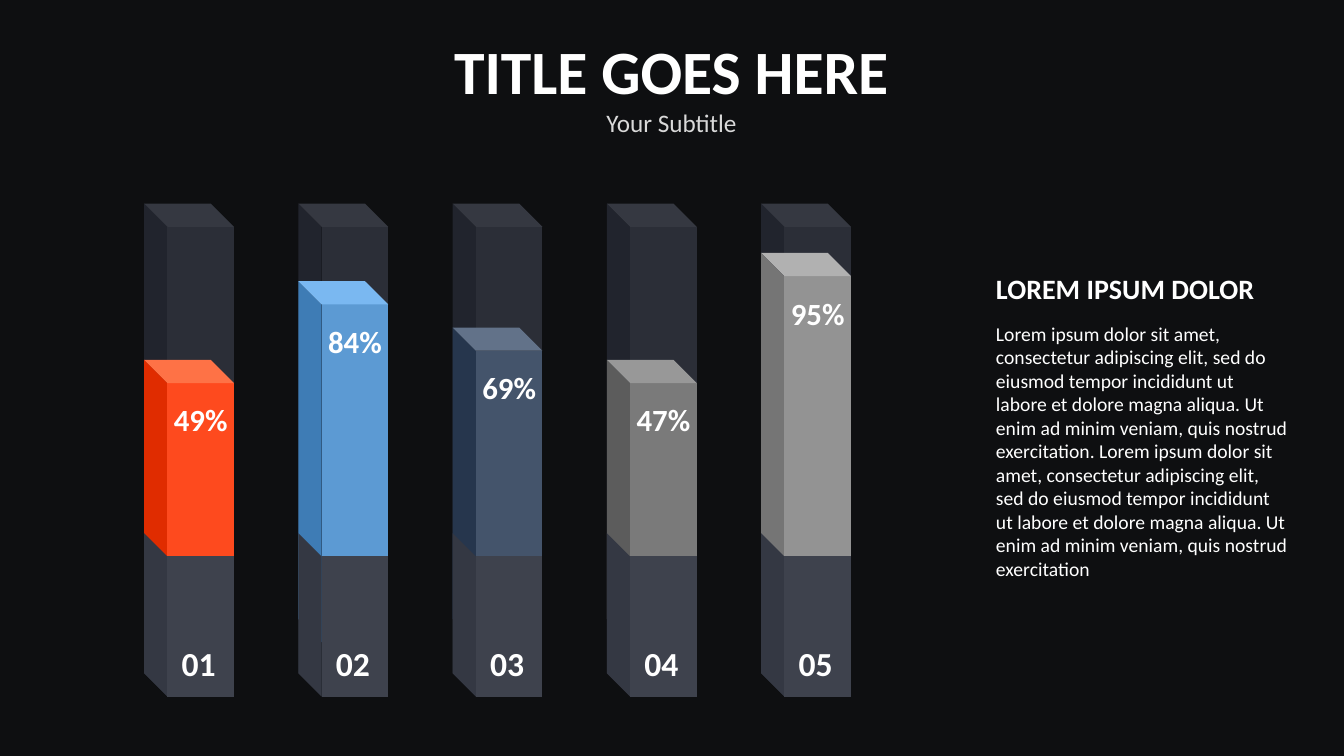
from pptx import Presentation
from pptx.dml.color import RGBColor
from pptx.enum.text import MSO_AUTO_SIZE, PP_ALIGN
from pptx.util import Inches, Pt

CENTER = PP_ALIGN.CENTER
LEFT = PP_ALIGN.LEFT
GROW = MSO_AUTO_SIZE.SHAPE_TO_FIT_TEXT

BACKGROUND = RGBColor(0x0E, 0x0F, 0x11)
WHITE = RGBColor(0xFF, 0xFF, 0xFF)
SUBTITLE_GRAY = RGBColor(0xD9, 0xD9, 0xD9)
TRACK_SIDE = RGBColor(0x21, 0x24, 0x2D)
TRACK_FRONT = RGBColor(0x2B, 0x2E, 0x37)
TRACK_TOP = RGBColor(0x35, 0x38, 0x41)
BASE_SIDE = RGBColor(0x34, 0x38, 0x43)
BASE_FRONT = RGBColor(0x3E, 0x42, 0x4D)
RED = [RGBColor(0xE0, 0x2C, 0x00), RGBColor(0xFE, 0x4A, 0x1E), RGBColor(0xFE, 0x72, 0x46)]
BLUE = [RGBColor(0x3E, 0x7C, 0xB5), RGBColor(0x5C, 0x9A, 0xD3), RGBColor(0x7A, 0xB8, 0xF1)]
NAVY = [RGBColor(0x26, 0x36, 0x4D), RGBColor(0x44, 0x54, 0x6B), RGBColor(0x62, 0x72, 0x89)]
GRAY = [RGBColor(0x5C, 0x5C, 0x5C), RGBColor(0x7A, 0x7A, 0x7A), RGBColor(0x98, 0x98, 0x98)]
SILVER = [RGBColor(0x75, 0x75, 0x75), RGBColor(0x93, 0x93, 0x93), RGBColor(0xB1, 0xB1, 0xB1)]

FIRST_LEFT = 1.43
PITCH = 1.53
DEPTH = 0.23
FRONT_WIDTH = 0.66
TRACK_START = 2.02
BASE_START = 5.29
COLUMN_END = 6.68
VALUE_END = 6.14

deck = Presentation()
deck.slide_width = Inches(13.33)
deck.slide_height = Inches(7.5)
page = deck.slides.add_slide(deck.slide_layouts[6])
page.background.fill.solid()
page.background.fill.fore_color.rgb = BACKGROUND


def add_face(points, color):
    corners = [(Inches(x), Inches(y)) for x, y in points]
    builder = page.shapes.build_freeform(*corners[0])
    builder.add_line_segments(corners[1:], close=True)
    face = builder.convert_to_shape()
    face.shadow.inherit = False
    face.fill.solid()
    face.fill.fore_color.rgb = color
    face.line.fill.background()


def add_text(left, top, width, height, lines, align):
    box = page.shapes.add_textbox(Inches(left), Inches(top), Inches(width), Inches(height))
    frame = box.text_frame
    frame.word_wrap = True
    frame.auto_size = GROW
    for index, (text, size, bold, color, gap) in enumerate(lines):
        para = frame.add_paragraph() if index else frame.paragraphs[0]
        para.text = text
        para.alignment = align
        if gap:
            para.space_before = Pt(gap)
        para.font.name = "Calibri"
        para.font.size = Pt(size)
        para.font.bold = bold
        para.font.color.rgb = color


add_text(3.65, 0.28, 6.02, 1.14, [
    ("TITLE GOES HERE", 44, True, WHITE, 0),
    ("Your Subtitle", 18, False, SUBTITLE_GRAY, 0),
], CENTER)

columns = [
    ("01", "49%", 3.57, RED),
    ("02", "84%", 2.79, BLUE),
    ("03", "69%", 3.25, NAVY),
    ("04", "47%", 3.57, GRAY),
    ("05", "95%", 2.51, SILVER),
]
for index, (number, percent, value_start, value_colors) in enumerate(columns):
    left = FIRST_LEFT + index * PITCH
    edge = left + DEPTH
    right = edge + FRONT_WIDTH
    blocks = [
        (TRACK_START, COLUMN_END, [TRACK_SIDE, TRACK_FRONT, TRACK_TOP]),
        (value_start, VALUE_END, value_colors),
        (BASE_START, COLUMN_END, [BASE_SIDE, BASE_FRONT]),
    ]
    for start, end, colors in blocks:
        front_start, front_end = start + DEPTH, end + DEPTH
        faces = [
            [(left, start), (edge, front_start), (edge, front_end), (left, end)],
            [(edge, front_start), (right, front_start), (right, front_end), (edge, front_end)],
            [(left, start), (left + FRONT_WIDTH, start), (right, front_start), (edge, front_start)],
        ]
        for points, color in zip(faces, colors):
            add_face(points, color)
    add_text(left + 0.2, 6.33, 0.68, 0.5, [(number, 24, True, WHITE, 0)], CENTER)
    add_text(left + 0.12, value_start + 0.36, 0.88, 0.47, [(percent, 22, True, WHITE, 0)], CENTER)

body = (
    "Lorem ipsum dolor sit amet, consectetur adipiscing elit, sed do eiusmod tempor "
    "incididunt ut labore et dolore magna aliqua. Ut enim ad minim veniam, quis nostrud "
    "exercitation. Lorem ipsum dolor sit amet, consectetur adipiscing elit, sed do eiusmod "
    "tempor incididunt ut labore et dolore magna aliqua. Ut enim ad minim veniam, quis "
    "nostrud exercitation"
)
add_text(9.78, 2.64, 3.09, 3.97, [
    ("LOREM IPSUM DOLOR", 20, True, WHITE, 0),
    (body, 14, False, WHITE, 12),
], LEFT)

deck.save("out.pptx")
